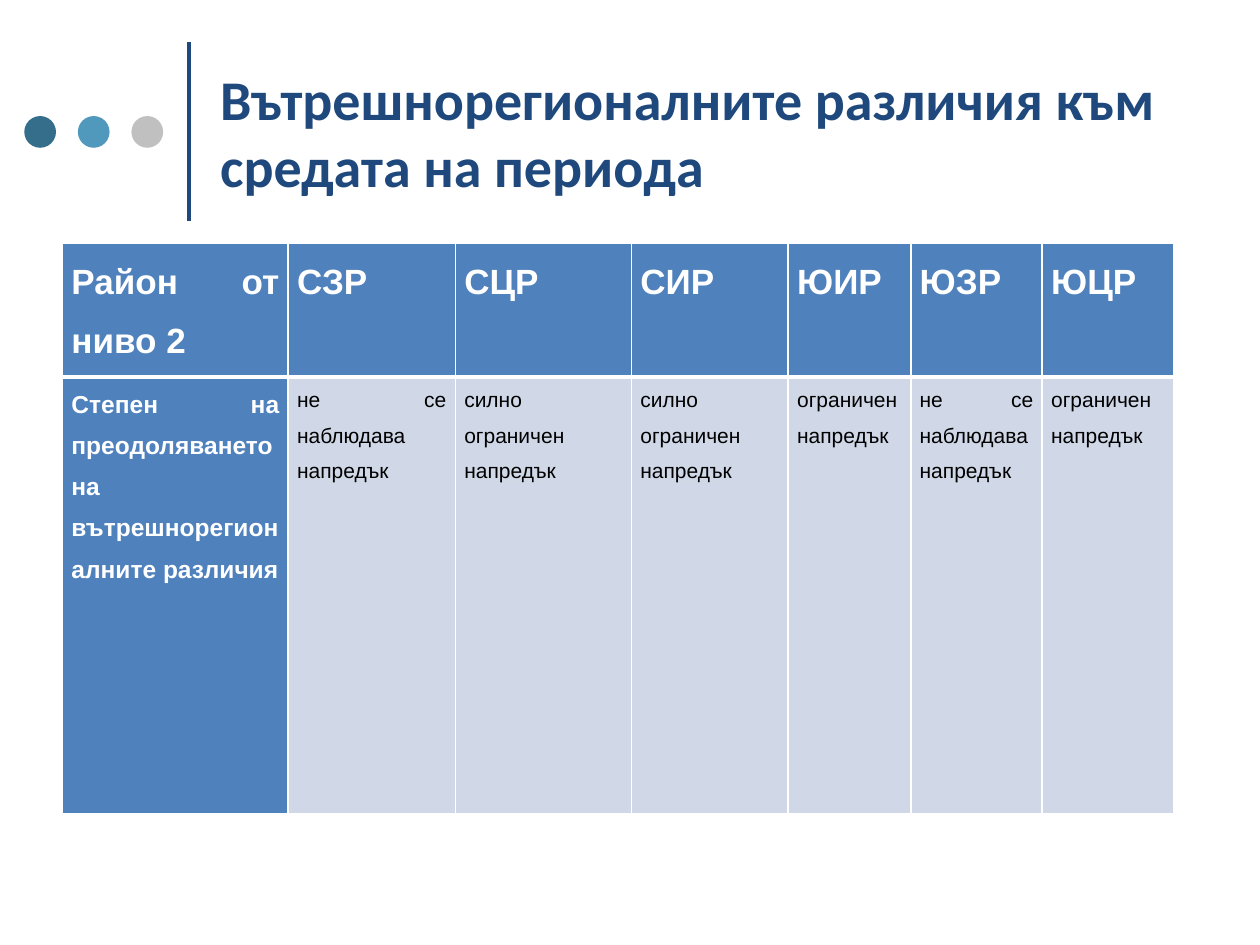
from lxml import etree
from pptx import Presentation
from pptx.dml.color import RGBColor
from pptx.enum.shapes import MSO_CONNECTOR, MSO_SHAPE
from pptx.enum.text import MSO_ANCHOR, PP_ALIGN
from pptx.oxml.ns import qn
from pptx.util import Cm, Pt

STRAIGHT = MSO_CONNECTOR.STRAIGHT
OVAL = MSO_SHAPE.OVAL
MIDDLE = MSO_ANCHOR.MIDDLE
LEFT, JUSTIFY = PP_ALIGN.LEFT, PP_ALIGN.JUSTIFY

NAVY, BLUE, PALE, WHITE, BLACK = "1F497D", "4F81BD", "D0D8E8", "FFFFFF", "000000"


def color(value):
    return RGBColor.from_string(value)


def write(frame, text, font="Arial", size=12, ink=BLACK, bold=False,
          align=LEFT, line=None, before=0, after=0):
    para = frame.paragraphs[0]
    para.alignment = align
    para.line_spacing = line
    para.space_before, para.space_after = Pt(before), Pt(after)
    span = para.add_run()
    span.text = text
    span.font.name, span.font.size, span.font.bold = font, Pt(size), bold
    span.font.color.rgb = color(ink)


deck = Presentation()
deck.slide_width, deck.slide_height = Cm(25.4), Cm(19.05)
page = deck.slides.add_slide(deck.slide_layouts[6])

# Vertical rule beside the title
rule = page.shapes.add_connector(STRAIGHT, Cm(3.81), Cm(4.45), Cm(3.81), Cm(0.84))
rule.line.color.rgb = color(NAVY)
rule.line.width = Pt(2)
etree.SubElement(rule._element.spPr, qn("a:effectLst"))

# Three dots
for index, fill in enumerate(["356E8B", "5098BC", "C0C0C0"]):
    dot = page.shapes.add_shape(OVAL, Cm(0.49 + 1.08 * index), Cm(2.34), Cm(0.64), Cm(0.64))
    dot.shadow.inherit = False
    dot.fill.solid()
    dot.fill.fore_color.rgb = color(fill)
    dot.line.fill.background()

# Title
title = page.shapes.add_textbox(Cm(4.23), Cm(0.53), Cm(19.48), Cm(4.24))
frame = title.text_frame
frame.word_wrap = True
frame.vertical_anchor = MIDDLE
frame.margin_left = frame.margin_right = frame.margin_top = frame.margin_bottom = Cm(0.21)
write(frame, "Вътрешнорегионалните различия към средата на периода",
      font="Calibri", size=32, ink=NAVY, bold=True)

# Table of regions
rows = [
    ["Район от ниво 2", "СЗР", "СЦР", "СИР", "ЮИР", "ЮЗР", "ЮЦР"],
    ["Степен на преодоляването на вътрешнорегионалните различия",
     "не се наблюдава напредък", "силно ограничен напредък",
     "силно ограничен напредък", "ограничен напредък",
     "не се наблюдава напредък", "ограничен напредък"],
]
widths = [4.55, 3.37, 3.55, 3.16, 2.47, 2.65, 2.65]
heights = [2.69, 8.81]
table = page.shapes.add_table(len(rows), len(widths), Cm(1.26), Cm(4.91),
                              Cm(sum(widths)), Cm(sum(heights))).table
for column, width in zip(table.columns, widths):
    column.width = Cm(width)
for row, height in zip(table.rows, heights):
    row.height = Cm(height)

for r, texts in enumerate(rows):
    for c, text in enumerate(texts):
        cell = table.cell(r, c)
        heading = r == 0 or c == 0
        cell.margin_left = cell.margin_right = Cm(0.18)
        cell.margin_top = cell.margin_bottom = 0

        # White borders, thicker between the header and the body
        properties = cell._tc.get_or_add_tcPr()
        for side in ("L", "R", "T", "B"):
            thick = (r, side) in [(0, "B"), (1, "T")]
            border = etree.SubElement(properties, qn(f"a:ln{side}"), w=str(Pt(3 if thick else 1)))
            paint = etree.SubElement(border, qn("a:solidFill"))
            etree.SubElement(paint, qn("a:srgbClr"), val=WHITE)

        cell.fill.solid()
        cell.fill.fore_color.rgb = color(BLUE if heading else PALE)
        write(cell.text_frame, text, size=20 if r == 0 else 14 if c == 0 else 12,
              ink=WHITE if heading else BLACK, bold=heading,
              align=JUSTIFY, line=1.5, before=18, after=6)

deck.save("out.pptx")
